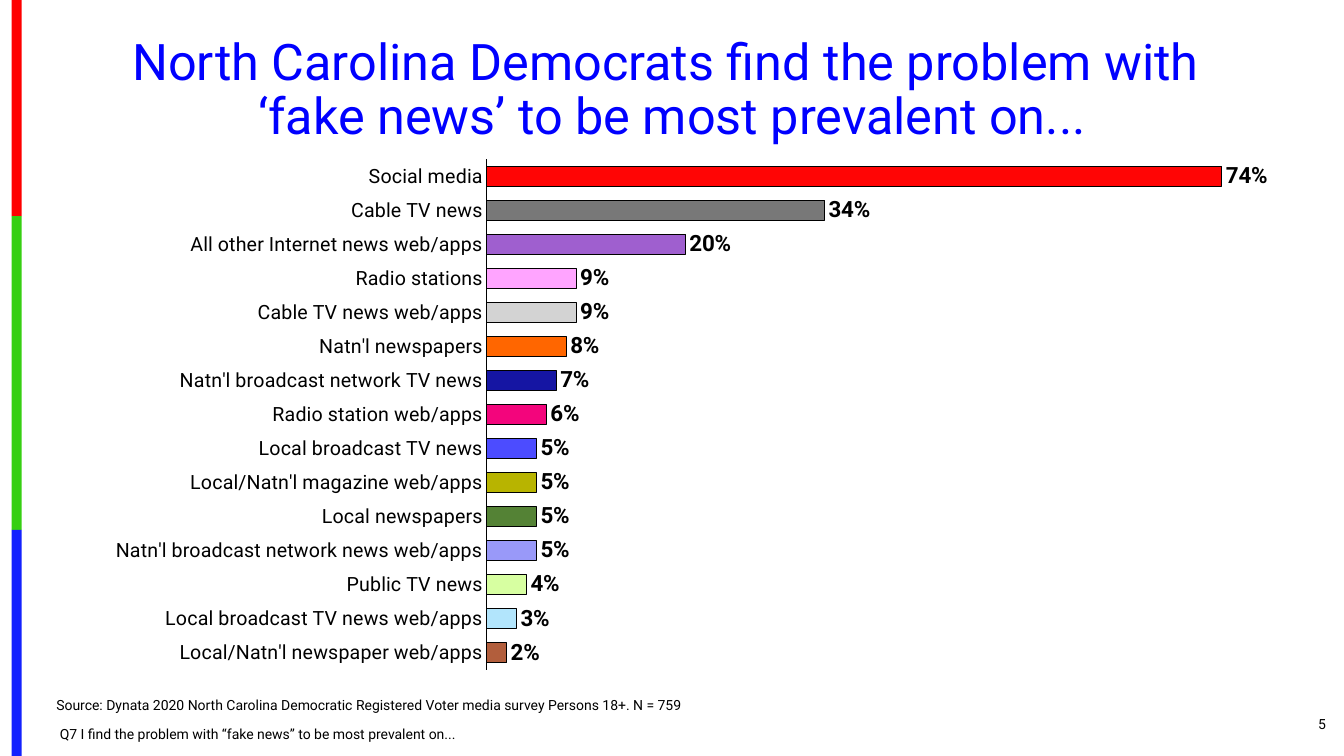
from lxml import etree
from pptx import Presentation
from pptx.chart.data import CategoryChartData
from pptx.dml.color import RGBColor
from pptx.enum.chart import XL_CHART_TYPE as CT, XL_LABEL_POSITION as LP, XL_TICK_MARK as TM
from pptx.enum.shapes import MSO_SHAPE
from pptx.enum.text import MSO_ANCHOR as ANCHOR, PP_ALIGN as AL
from pptx.oxml import parse_xml
from pptx.oxml.ns import nsdecls
from pptx.util import Pt

FONT = "Roboto"
WIDTH, HEIGHT = 960, 540

STRIPES = [("FE0000", 154.5), ("36CF12", 224), ("1322FE", 161.5)]

# Source of news, share in percent, bar colour; from top to bottom
SOURCES = [
    ("Social media", 74, "FF0505"),
    ("Cable TV news", 34, "787878"),
    ("All other Internet news web/apps", 20, "9F5FCF"),
    ("Radio stations", 9, "FFA4FF"),
    ("Cable TV news web/apps", 9, "D3D3D3"),
    ("Natn'l newspapers", 8, "FF6600"),
    ("Natn'l broadcast network TV news", 7, "1515A3"),
    ("Radio station web/apps", 6, "F3057C"),
    ("Local broadcast TV news", 5, "4C4CFF"),
    ("Local/Natn'l magazine web/apps", 5, "B8B400"),
    ("Local newspapers", 5, "548235"),
    ("Natn'l broadcast network news web/apps", 5, "9999F9"),
    ("Public TV news", 4, "D7FFA1"),
    ("Local broadcast TV news web/apps", 3, "B2E5FC"),
    ("Local/Natn'l newspaper web/apps", 2, "B25E3C"),
]


def rgb(color):
    return RGBColor.from_string(color)


def set_font(font, size, color="000000", bold=False):
    font.name, font.size, font.bold = FONT, Pt(size), bold
    font.color.rgb = rgb(color)


def set_line(line, color="000000", width=0.75):
    line.color.rgb = rgb(color)
    line.width = Pt(width)


def add_text(s, box, paragraphs, size, color="000000", align=AL.LEFT,
             anchor=ANCHOR.MIDDLE, spacing=1.0, gap=0):
    """Add a text box; gap is the space between its paragraphs."""
    tf = s.shapes.add_textbox(*map(Pt, box)).text_frame
    tf.word_wrap = True
    tf.vertical_anchor = anchor
    for i, text in enumerate(paragraphs):
        p = tf.add_paragraph() if i else tf.paragraphs[0]
        p.text = text
        p.alignment, p.line_spacing = align, spacing
        p.space_before = Pt(gap if i else 0)
        for r in p.runs:
            set_font(r.font, size, color)
    return tf


def add_stripes(s, left, top, width):
    for color, height in STRIPES:
        sp = s.shapes.add_shape(MSO_SHAPE.RECTANGLE, Pt(left), Pt(top), Pt(width), Pt(height))
        sp.shadow.inherit = False
        sp.fill.solid()
        sp.fill.fore_color.rgb = rgb(color)
        sp.line.fill.background()
        top += height


def set_plot_area(chart, x, y, w, h):
    """Fix the inner plot area, in fractions of the chart."""
    plot_area = chart.plots[0]._element.getparent()
    for old in plot_area.findall("{*}layout"):
        plot_area.remove(old)
    layout = parse_xml(f"<c:layout {nsdecls('c')}><c:manualLayout/></c:layout>")
    values = {"layoutTarget": "inner", "xMode": "edge", "yMode": "edge",
              "x": x, "y": y, "w": w, "h": h}
    for tag, value in values.items():
        name = etree.QName(layout.nsmap["c"], tag)
        etree.SubElement(layout[0], name, val=str(value))
    plot_area.insert(0, layout)


def add_bar_chart(s, box):
    rows = SOURCES[::-1]
    data = CategoryChartData(number_format="0%")
    data.categories = [name for name, _, _ in rows]
    data.add_series("Series 1", [share / 100 for _, share, _ in rows])
    chart = s.shapes.add_chart(CT.BAR_CLUSTERED, *map(Pt, box), data).chart
    chart.has_legend = chart.has_title = False
    set_font(chart.font, 10)
    set_plot_area(chart, 0.352, 0.028, 0.635, 0.943)

    cat = chart.category_axis
    cat.major_tick_mark = cat.minor_tick_mark = TM.NONE
    cat.has_major_gridlines = False
    set_font(cat.tick_labels.font, 14)
    set_line(cat.format.line)

    val = chart.value_axis
    val.minimum_scale, val.maximum_scale = 0, 0.8
    val.has_major_gridlines = False
    val.visible = False

    plot = chart.plots[0]
    plot.gap_width = 72
    plot.vary_by_categories = False
    plot.has_data_labels = True
    labels = plot.data_labels
    labels.show_value = True
    labels.number_format, labels.number_format_is_linked = "0%", False
    labels.position = LP.OUTSIDE_END
    set_font(labels.font, 16, bold=True)

    for i, (_, _, color) in enumerate(rows):
        fmt = plot.series[0].points[i].format
        fmt.fill.solid()
        fmt.fill.fore_color.rgb = rgb(color)
        set_line(fmt.line)


def add_footer(s, left, top, width, height):
    tf = add_text(s, (left, top, 680, height), [
        "Source: Dynata 2020 North Carolina Democratic Registered Voter media survey "
        "Persons 18+. N = 759",
        "Q7 I find the problem with “fake news” to be most prevalent on...",
    ], 10, anchor=ANCHOR.BOTTOM, spacing=0.9, gap=10)
    tf.paragraphs[1]._p.get_or_add_pPr().set("marL", str(Pt(2.5)))
    add_text(s, (left + width - 78, top + 7, 78, 29), ["5"], 10, align=AL.RIGHT)


def add_chart_slide(prs):
    s = prs.slides.add_slide(prs.slide_layouts[6])
    left, width = 33.1, 894
    add_stripes(s, 8.3, 0, 7.2)
    add_text(s, (left, 22.3, width, 85.7), [
        "North Carolina Democrats find the problem with \v"
        "‘fake news’ to be most prevalent on...",
    ], 36, "0000FF", AL.CENTER, spacing=0.9)
    add_bar_chart(s, (left, 103, width, 386.6))
    add_footer(s, left, 495.4, 921, 38.9)


def main():
    prs = Presentation()
    prs.slide_width, prs.slide_height = Pt(WIDTH), Pt(HEIGHT)
    add_chart_slide(prs)
    prs.save("out.pptx")


if __name__ == "__main__":
    main()
